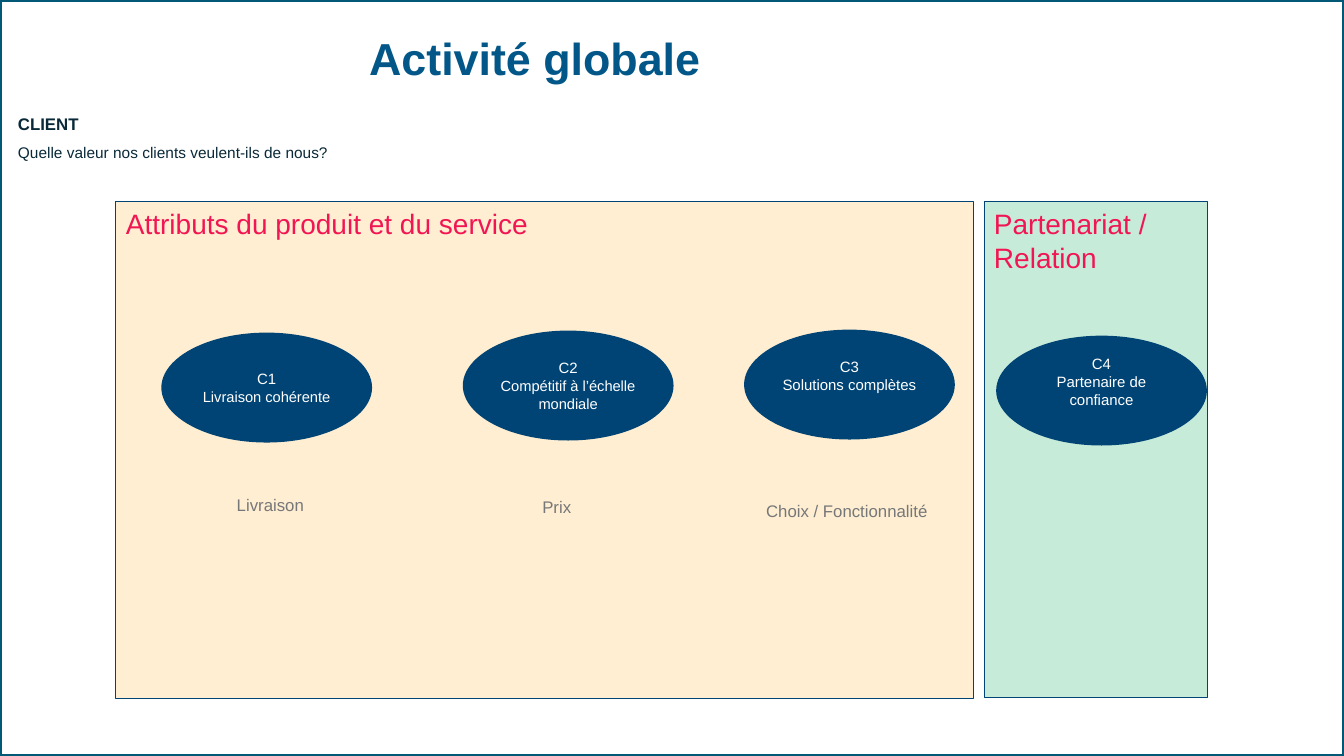
from lxml.etree import SubElement
from pptx import Presentation
from pptx.dml.color import RGBColor
from pptx.enum.shapes import MSO_SHAPE
from pptx.enum.text import MSO_ANCHOR, PP_ALIGN
from pptx.oxml.ns import qn
from pptx.util import Pt

PX = 9144
NAVY, BLUE, FRAME = "004475", "025788", "025877"
PINK, GREY, INK, WHITE = "F11653", "767779", "092939", "FFFFFF"
OVAL_W, OVAL_H, LINE = 209, 109, 18


def px(*lengths):
    """Turn pixel lengths into EMU."""
    return [n * PX for n in lengths]


def rgb(value):
    """Turn a hex string into a colour."""
    return RGBColor.from_string(value)


def add_text(tf, text, first=True, size=12, color=INK, bold=False,
             align=PP_ALIGN.LEFT, before=0, spacing=None):
    """Write one formatted paragraph into a text frame."""
    p = tf.paragraphs[0] if first else tf.add_paragraph()
    p.alignment = align
    if before:
        p.space_before = Pt(before)
    if spacing:
        p.line_spacing = spacing
    r = p.add_run()
    r.text = text
    r.font.name, r.font.size, r.font.bold = "Arial", Pt(size), bold
    r.font.color.rgb = rgb(color)


def add_box(s, kind, box, fill=None, line=None, width=0.75, alpha=None):
    """Add a preset shape with an optional fill and outline."""
    sp = s.shapes.add_shape(kind, *px(*box))
    sp.shadow.inherit = False
    if fill:
        sp.fill.solid()
        sp.fill.fore_color.rgb = rgb(fill)
    else:
        sp.fill.background()
    if alpha:
        clr = sp.fill._xPr.find(qn("a:solidFill"))[0]
        SubElement(clr, qn("a:alpha"), val=str(alpha * 1000))
    if line:
        sp.line.color.rgb = rgb(line)
        sp.line.width = Pt(width)
    else:
        sp.line.fill.background()
    return sp


def add_panel(s, box, heading, fill, alpha=None):
    """Add a coloured panel with its heading at the top."""
    tf = add_box(s, MSO_SHAPE.RECTANGLE, box, fill, NAVY, alpha=alpha).text_frame
    tf.word_wrap, tf.vertical_anchor = True, MSO_ANCHOR.TOP
    add_text(tf, heading, size=20, color=PINK)


def add_goal(s, left, top, code, goal, size=10.5, raised=False):
    """Add an oval with the code and wording of a goal."""
    sp = add_box(s, MSO_SHAPE.OVAL, (left, top, OVAL_W, OVAL_H), NAVY)
    tf = sp.text_frame
    tf.word_wrap, tf.vertical_anchor = True, MSO_ANCHOR.MIDDLE
    tf.margin_left = tf.margin_right = 0
    tf.margin_top, tf.margin_bottom = px(5, 5 + LINE * raised)
    add_text(tf, code, size=10.7, color=WHITE, align=PP_ALIGN.CENTER)
    add_text(tf, goal, first=False, size=size, color=WHITE, align=PP_ALIGN.CENTER)


def add_label(s, box, text):
    """Add a grey caption on one line."""
    tf = s.shapes.add_textbox(*px(*box)).text_frame
    tf.word_wrap = False
    add_text(tf, text, color=GREY)


def add_title(s, box, text):
    """Place and format the slide title."""
    sp = s.shapes.title
    sp.left, sp.top, sp.width, sp.height = px(*box)
    sp.text_frame.vertical_anchor = MSO_ANCHOR.MIDDLE
    add_text(sp.text_frame, text, size=32, color=BLUE, bold=True,
             align=PP_ALIGN.CENTER, spacing=0.9)


def add_intro(s, box, heading, question):
    """Add the perspective name and its question."""
    tf = s.shapes.add_textbox(*px(*box)).text_frame
    tf.word_wrap = True
    add_text(tf, heading, bold=True)
    add_text(tf, question, first=False, size=11, before=6.5)


def main():
    """Build the slide and save it."""
    prs = Presentation()
    prs.slide_width, prs.slide_height = px(1333, 750)
    s = prs.slides.add_slide(prs.slide_layouts[5])
    add_box(s, MSO_SHAPE.RECTANGLE, (0, 0, 1333, 750), line=FRAME, width=3)
    add_panel(s, (976, 200, 222, 492), "Partenariat / Relation", "C7EBD9")
    add_panel(s, (115, 200, 851, 493), "Attributs du produit et du service",
              "FFAA1B", alpha=20)
    add_title(s, (37, 28, 987, 64), "Activité globale")
    add_intro(s, (8, 108, 594, 86), "CLIENT",
              "Quelle valeur nos clients veulent-ils de nous?")
    add_goal(s, 160, 330, "C1", "Livraison cohérente")
    add_goal(s, 459, 328, "C2", "Compétitif à l’échelle mondiale")
    add_goal(s, 738, 327, "C3", "Solutions complètes", size=10.7, raised=True)
    add_goal(s, 988, 333, "C4", "Partenaire de confiance", size=10.7, raised=True)
    add_label(s, (225, 486, 87, 30), "Livraison")
    add_label(s, (528, 488, 49, 30), "Prix")
    add_label(s, (750, 492, 181, 30), "Choix / Fonctionnalité")
    prs.save("out.pptx")


if __name__ == "__main__":
    main()
